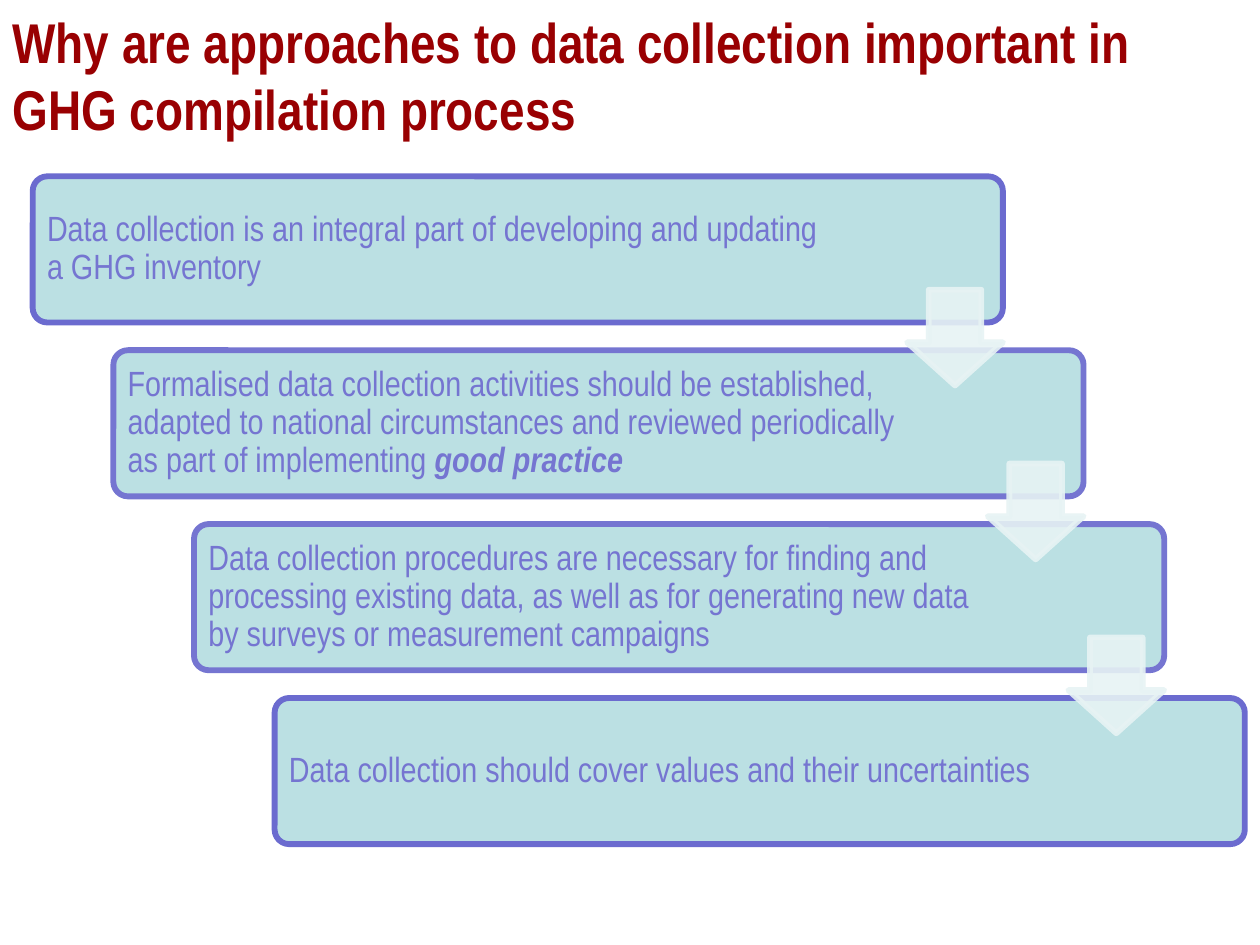
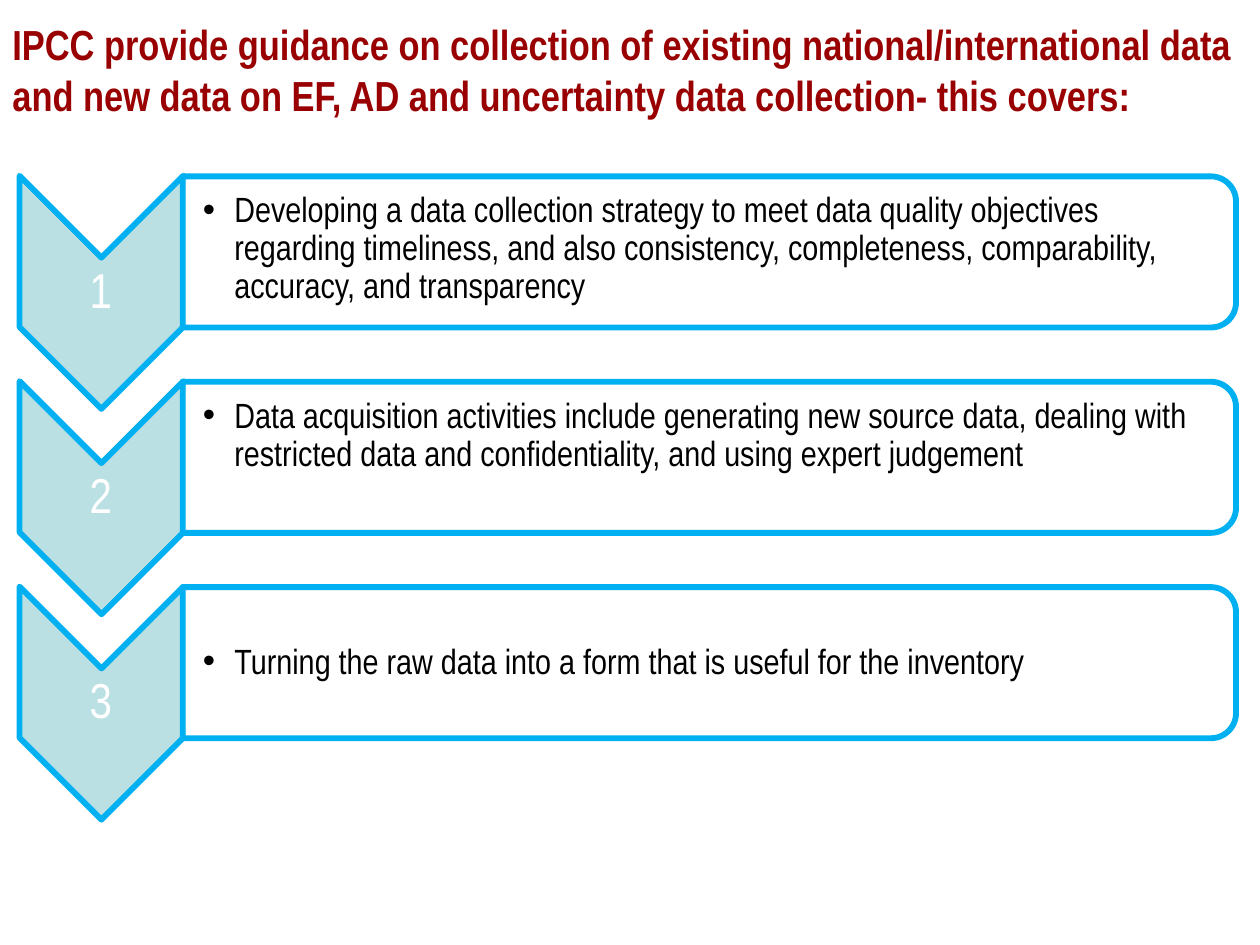
from lxml import etree
from pptx import Presentation
from pptx.dml.color import RGBColor
from pptx.enum.shapes import MSO_SHAPE
from pptx.enum.text import MSO_ANCHOR, PP_ALIGN
from pptx.oxml.ns import qn
from pptx.util import Inches, Pt

ROUNDED = MSO_SHAPE.ROUNDED_RECTANGLE
DOWN_ARROW = MSO_SHAPE.DOWN_ARROW
CHEVRON = MSO_SHAPE.CHEVRON
TWO_ROUNDED = MSO_SHAPE.ROUND_2_SAME_RECTANGLE
MIDDLE = MSO_ANCHOR.MIDDLE
LEFT, CENTER = PP_ALIGN.LEFT, PP_ALIGN.CENTER

FONT = "Arial Narrow"
TITLE_RED = "990002"
PALE_TEAL = "BBE0E3"
ARROW_TINT = "E7F3F4"
STEP_TEXT = "7575D1"
STEP_EDGE = "6B6BCF"
BRIGHT_BLUE = "00B0F0"
WHITE, BLACK = "FFFFFF", "000000"

STEPS = [
    (STEP_EDGE, ["Data collection is an integral part of developing and updating a GHG inventory"]),
    (STEP_TEXT, ["Formalised data collection activities should be established, adapted to national "
                 "circumstances and reviewed periodically as part of implementing ", "good practice"]),
    (STEP_TEXT, ["Data collection procedures are necessary for finding and processing existing data, "
                 "as well as for generating new data by surveys or measurement campaigns"]),
    (STEP_EDGE, ["Data collection should cover values and their uncertainties"]),
]
TOPICS = [
    ("Developing a data collection strategy to meet data quality objectives regarding timeliness, "
     "and also consistency, completeness, comparability, accuracy, and transparency", 0.02),
    ("Data acquisition activities include generating new source data, dealing with restricted data "
     "and confidentiality, and using expert judgement", 0.17),
    ("Turning the raw data into a form that is useful for the inventory", 0),
]


def color(value):
    """Turn a hex string into a colour."""
    return RGBColor.from_string(value)


class Deck:
    """Hold the shared style and the current slide."""

    def __init__(self):
        """Start an empty presentation."""
        self.presentation = Presentation()
        self.presentation.slide_width = Inches(10)
        self.presentation.slide_height = Inches(7.5)
        self.slide = None

    def add_slide(self, title, height, size):
        """Add a blank slide with its red title."""
        self.slide = self.presentation.slides.add_slide(self.presentation.slide_layouts[6])
        self.text(0, 0, 10, height, title, size, TITLE_RED, margins=(0.1, 0.05, 0.1, 0.05),
                  spacing=1, bold=True)

    def shape(self, kind, left, top, width, height, fill, line, adjustments=(), rotation=0,
              fill_alpha=100, line_alpha=100):
        """Add a preset shape with a thick, round-jointed outline."""
        shape = self.slide.shapes.add_shape(kind, Inches(left), Inches(top), Inches(width),
                                            Inches(height))
        shape.shadow.inherit = False
        shape.rotation = rotation
        for index, value in enumerate(adjustments):
            shape.adjustments[index] = value
        shape.fill.solid()
        shape.fill.fore_color.rgb = color(fill)
        shape.line.color.rgb = color(line)
        shape.line.width = Pt(3.35)
        properties = shape._element.spPr
        outline = properties.find(qn("a:ln"))
        etree.SubElement(outline, qn("a:round"))
        for parent, alpha in ((properties, fill_alpha), (outline, line_alpha)):
            if alpha < 100:
                value = parent.find(qn("a:solidFill")).find(qn("a:srgbClr"))
                etree.SubElement(value, qn("a:alpha"), val=str(alpha * 1000))
        return shape

    def text(self, left, top, width, height, words, size, ink, **style):
        """Add a text box holding one paragraph."""
        box = self.slide.shapes.add_textbox(Inches(left), Inches(top), Inches(width),
                                            Inches(height))
        self.set_text(box, [words], size, ink, **style)

    def set_text(self, shape, parts, size, ink, margins, align=LEFT, spacing=0.9, bold=False,
                 bullet=False):
        """Fill in one paragraph, with any part after the first in bold italics."""
        frame = shape.text_frame
        frame.word_wrap = True
        frame.vertical_anchor = MIDDLE
        (frame.margin_left, frame.margin_top, frame.margin_right,
         frame.margin_bottom) = map(Inches, margins)
        paragraph = frame.paragraphs[0]
        paragraph.alignment = align
        paragraph.line_spacing = spacing
        if bullet:
            properties = paragraph._p.get_or_add_pPr()
            properties.set("marL", str(Inches(0.25)))
            properties.set("indent", str(-Inches(0.25)))
            etree.SubElement(properties, qn("a:buFont"), typeface="Arial")
            etree.SubElement(properties, qn("a:buChar"), char="•")
        paragraph.font.name = FONT
        paragraph.font.size = Pt(size)
        paragraph.font.bold = bold
        paragraph.font.color.rgb = color(ink)
        for index, part in enumerate(parts):
            run = paragraph.add_run()
            run.text = part
            if index:
                run.font.bold = run.font.italic = True

    def step(self, left, top, edge, parts):
        """Add one box of the staircase."""
        box = self.shape(ROUNDED, left, top, 7.7, 1.16, PALE_TEAL, edge, [0.1])
        self.set_text(box, parts, 20, STEP_TEXT, margins=(0.08, 0.08, 1.36, 0.08))

    def step_arrow(self, left, top):
        """Add the translucent arrow leading to the next step."""
        self.shape(DOWN_ARROW, left, top, 0.76, 0.76, ARROW_TINT, ARROW_TINT, [0.55, 0.45],
                   fill_alpha=90, line_alpha=90)

    def topic(self, number, middle, words, lift):
        """Add a numbered chevron and its bulleted panel."""
        chevron_middle = middle + 0.32
        self.shape(CHEVRON, -0.12, chevron_middle - 0.65, 1.85, 1.3, PALE_TEAL, BRIGHT_BLUE,
                   [0.5], rotation=90)
        self.text(0.15, chevron_middle - 0.28, 1.3, 0.56, str(number), 28, WHITE,
                  margins=[0.02] * 4, align=CENTER)
        self.shape(TWO_ROUNDED, 5.03, middle - 4.18, 1.2, 8.36, WHITE, BRIGHT_BLUE,
                   rotation=90, fill_alpha=90)
        self.text(1.45, middle - 0.55 - lift, 8.31, 1.1, words, 20, BLACK,
                  margins=(0.16, 0.01, 0.01, 0.01), bullet=True)


def main():
    """Build both slides and save them."""
    deck = Deck()
    deck.add_slide("Why are approaches to data collection important in GHG compilation process",
                   1.18, 32)
    corners = [(0.26 + 0.64 * index, 1.4 + 1.38 * index) for index in range(len(STEPS))]
    for (left, top), (edge, parts) in zip(corners, STEPS):
        deck.step(left, top, edge, parts)
    for left, top in corners[:-1]:
        deck.step_arrow(left + 6.94, top + 0.9)

    deck.add_slide("IPCC provide guidance on collection of existing national/international data "
                   "and new data on EF, AD and uncertainty data collection- this covers:", 1.1, 24)
    for index, (words, lift) in enumerate(TOPICS):
        deck.topic(index + 1, 2 + 1.63 * index, words, lift)
    deck.presentation.save("out.pptx")


if __name__ == "__main__":
    main()
